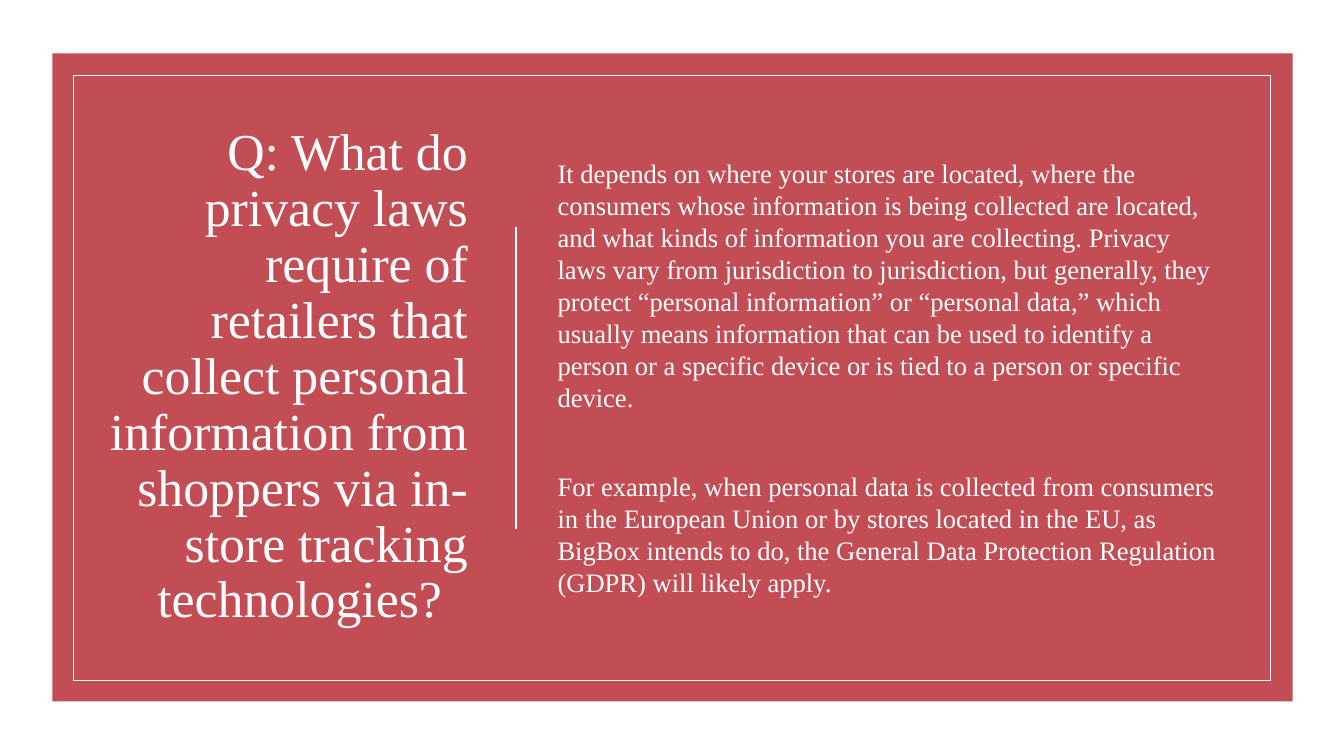
from pptx import Presentation
from pptx.dml.color import RGBColor
from pptx.enum.shapes import MSO_CONNECTOR, MSO_SHAPE
from pptx.enum.text import MSO_ANCHOR, MSO_AUTO_SIZE, PP_ALIGN
from pptx.oxml.ns import qn
from pptx.util import Pt
from lxml.etree import SubElement

QUESTION = ("Q: What do privacy laws require of retailers that collect personal "
            "information from shoppers via in-store tracking technologies?  ")
ANSWER = [
    "It depends on where your stores are located, where the consumers whose "
    "information is being collected are located, and what kinds of information "
    "you are collecting. Privacy laws vary from jurisdiction to jurisdiction, but "
    "generally, they protect “personal information” or “personal data,” which "
    "usually means information that can be used to identify a person or a specific "
    "device or is tied to a person or specific device.",
    "For example, when personal data is collected from consumers in the European "
    "Union or by stores located in the EU, as BigBox intends to do, the General "
    "Data Protection Regulation (GDPR) will likely apply.",
]
FONT, WHITE, RED = "Times New Roman", "FFFFFF", "C34D54"
PX = 9144  # EMU, 100 px to the inch
WIDTH, HEIGHT = 1333, 750
PANEL = (52, 53, 1230, 643)
FRAME = (73, 75, 1187, 600)
TITLE = (95, 109, 379, 531)
BODY = (543, 109, 679, 531)
DIVIDER = (512, 225, 512, 525)


def emu(lengths):
    return [n * PX for n in lengths]


def rgb(color):
    return RGBColor.from_string(color)


def add_rect(s, box, fill=None, line=None):
    sp = s.shapes.add_shape(MSO_SHAPE.RECTANGLE, *emu(box))
    sp.shadow.inherit = False
    if fill:
        sp.fill.solid()
        sp.fill.fore_color.rgb = rgb(fill)
    else:
        sp.fill.background()
    if line:
        sp.line.color.rgb = rgb(line)
        sp.line.width = Pt(0.5)
    else:
        sp.line.fill.background()


def add_divider(s, ends):
    cx = s.shapes.add_connector(MSO_CONNECTOR.STRAIGHT, *emu(ends))
    cx.line.color.rgb = rgb(WHITE)
    cx.line.width = Pt(1.25)
    SubElement(cx._element.spPr, qn("a:effectLst"))


def fill_text(sp, box, paragraphs, size, align=PP_ALIGN.LEFT, spacing=1.0, gap=0):
    """Place a placeholder in front of the shapes and write its paragraphs."""
    sp.left, sp.top, sp.width, sp.height = emu(box)
    tree = sp._element.getparent()
    tree.append(sp._element)
    tf = sp.text_frame
    tf.word_wrap = True
    tf.auto_size = MSO_AUTO_SIZE.NONE
    tf.vertical_anchor = MSO_ANCHOR.MIDDLE
    for i, text in enumerate(paragraphs):
        p = tf.paragraphs[0] if i == 0 else tf.add_paragraph()
        p.alignment, p.line_spacing = align, spacing
        p.space_before = Pt(gap if i else 0)
        pPr = p._p.get_or_add_pPr()
        pPr.set("marL", "0")
        pPr.set("indent", "0")
        SubElement(pPr, qn("a:buNone"))
        r = p.add_run()
        r.text = text
        r.font.name, r.font.size = FONT, Pt(size)
        r.font.color.rgb = rgb(WHITE)


def main():
    prs = Presentation()
    prs.slide_width, prs.slide_height = emu((WIDTH, HEIGHT))
    s = prs.slides.add_slide(prs.slide_layouts[1])
    add_rect(s, (0, 0, WIDTH, HEIGHT), fill=WHITE)
    add_rect(s, PANEL, fill=RED)
    add_divider(s, DIVIDER)
    add_rect(s, FRAME, line=WHITE)
    title, body = s.placeholders
    fill_text(title, TITLE, [QUESTION], 37, align=PP_ALIGN.RIGHT, spacing=0.9)
    fill_text(body, BODY, ANSWER, 19, gap=41)
    prs.save("out.pptx")


if __name__ == "__main__":
    main()
